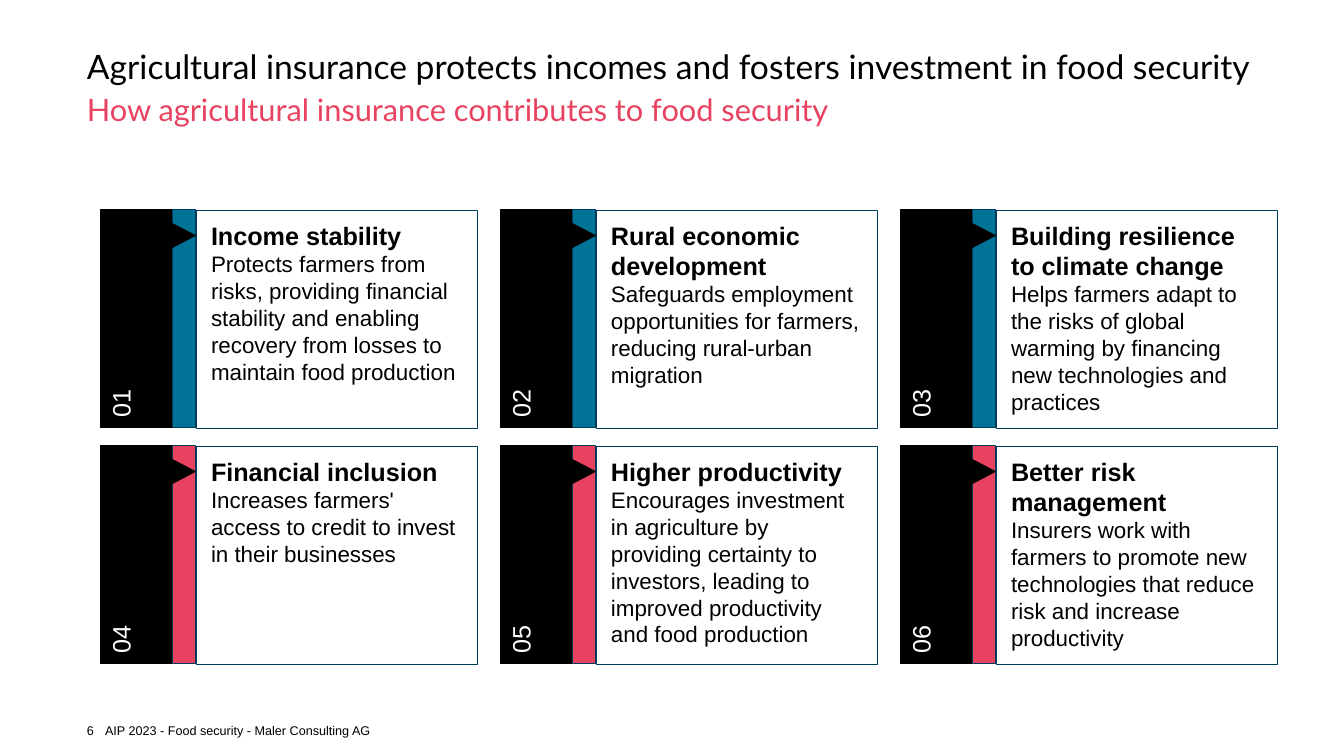
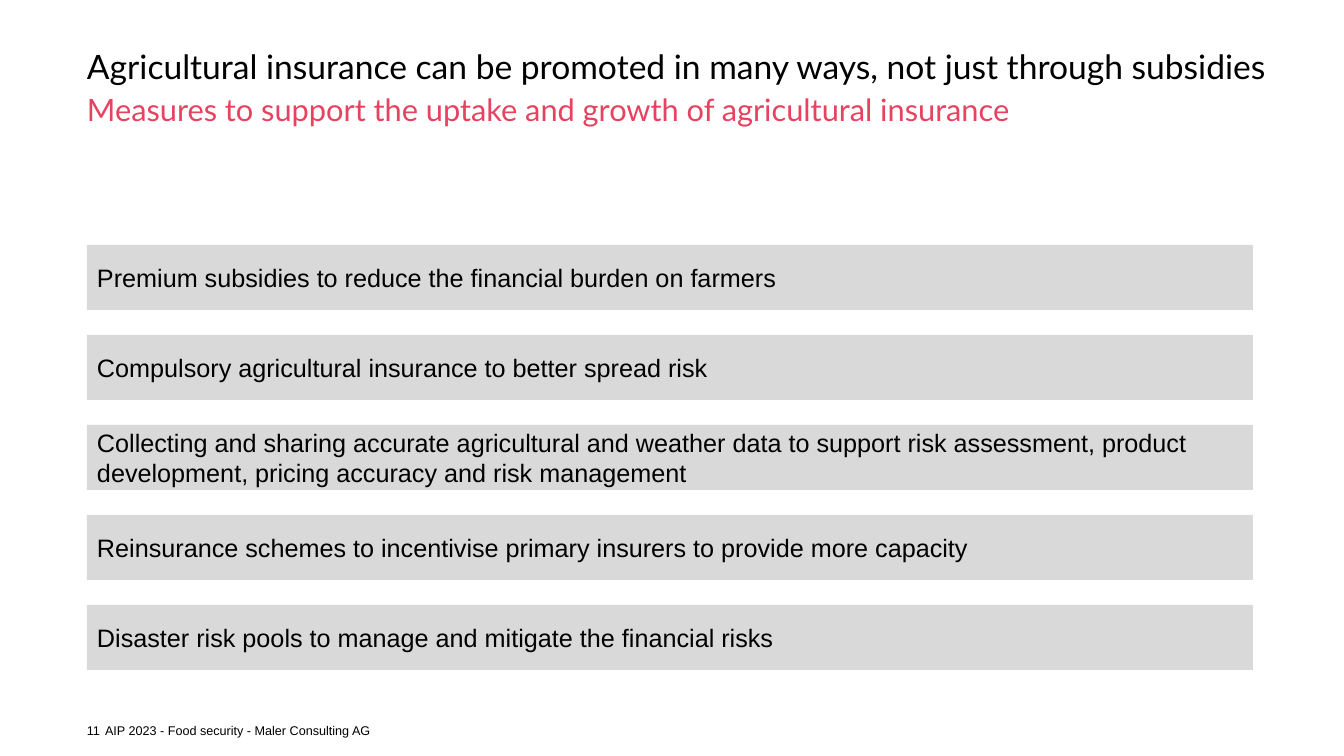
"""Build two slides on agricultural insurance and food security."""
from lxml.etree import SubElement
from pptx import Presentation
from pptx.dml.color import RGBColor
from pptx.enum.shapes import MSO_SHAPE
from pptx.enum.text import MSO_ANCHOR, MSO_AUTO_SIZE, PP_ALIGN
from pptx.oxml.ns import qn
from pptx.util import Emu, Pt

PX = 914400 / 100.8
HUES = {
    "black": "000000",
    "white": "FFFFFF",
    "navy": "003B5C",
    "blue": "007396",
    "red": "E74360",
    "grey": "D9D9D9",
}
RECT = MSO_SHAPE.RECTANGLE
LEFT = 87
NOTE = "AIP 2023 - Food security - Maler Consulting AG"

HEADS = [
    ("Agricultural insurance protects incomes and fosters investment in food security",
     "How agricultural insurance contributes to food security", 1180, "6"),
    ("Agricultural insurance can be promoted in many ways, not just through subsidies",
     "Measures to support the uptake and growth of agricultural insurance", 1218, "11"),
]
CARDS = [
    ("Income stability",
     "Protects farmers from risks, providing financial stability and enabling "
     "recovery from losses to maintain food production"),
    ("Rural economic development",
     "Safeguards employment opportunities for farmers, reducing rural-urban migration"),
    ("Building resilience to climate change",
     "Helps farmers adapt to the risks of global warming by financing new "
     "technologies and practices"),
    ("Financial inclusion",
     "Increases farmers' access to credit to invest in their businesses"),
    ("Higher productivity",
     "Encourages investment in agriculture by providing certainty to investors, "
     "leading to improved productivity and food production"),
    ("Better risk management",
     "Insurers work with farmers to promote new technologies that reduce risk "
     "and increase productivity"),
]
STEPS = [
    "Premium subsidies to reduce the financial burden on farmers",
    "Compulsory agricultural insurance to better spread risk",
    "Collecting and sharing accurate agricultural and weather data to support "
    "risk assessment, product development, pricing accuracy and risk management",
    "Reinsurance schemes to incentivise primary insurers to provide more capacity",
    "Disaster risk pools to manage and mitigate the financial risks",
]


def box(slide, kind, x, y, w, h, fill, line=None, width=0.25, turn=0):
    """Draw a shape that covers the given area once it is turned."""
    if turn:
        x, y, w, h = x + (w - h) // 2, y + (h - w) // 2, h, w
    shape = slide.shapes.add_shape(kind, *[Emu(round(n * PX)) for n in (x, y, w, h)])
    shape.rotation = turn
    shape.shadow.inherit = False
    shape.fill.solid()
    shape.fill.fore_color.rgb = RGBColor.from_string(HUES[fill])
    if line:
        shape.line.color.rgb = RGBColor.from_string(HUES[line])
        shape.line.width = Pt(width)
    else:
        shape.line.fill.background()
    return shape


def write(shape, rows, pad=(10, 5), anchor=MSO_ANCHOR.TOP, face="Arial", wrap=True):
    """Fill a shape with rows of text, size, colour and weight."""
    frame = shape.text_frame
    frame.text = "\n".join(row[0] for row in rows)
    frame.word_wrap = wrap
    frame.auto_size = MSO_AUTO_SIZE.NONE
    frame.vertical_anchor = anchor
    frame.margin_left = frame.margin_right = Emu(round(pad[0] * PX))
    frame.margin_top = frame.margin_bottom = Emu(round(pad[1] * PX))
    for par, (text, size, hue, bold) in zip(frame.paragraphs, rows):
        par.alignment = PP_ALIGN.LEFT
        for run in par.runs:
            run.font.name = face
            run.font.size = Pt(size)
            run.font.bold = bold
            run.font.color.rgb = RGBColor.from_string(HUES[hue])


deck = Presentation()
deck.slide_width = Emu(round(1344 * PX))
deck.slide_height = Emu(round(756 * PX))

for head, lead, wide, page in HEADS:
    slide = deck.slides.add_slide(deck.slide_layouts[1])
    title, body = slide.shapes.title, slide.placeholders[1]
    parts = [
        (title, head, 24, "black", 44, wide, MSO_ANCHOR.BOTTOM),
        (body, lead, 22, "red", 95, 1180, MSO_ANCHOR.TOP),
    ]
    for shape, text, size, hue, top, width, anchor in parts:
        shape.left, shape.top = Emu(round(LEFT * PX)), Emu(round(top * PX))
        shape.width, shape.height = Emu(round(width * PX)), Emu(round(43 * PX))
        write(shape, [(text, size, hue, False)], (0, 0), anchor, "Lato")
        par = shape.text_frame.paragraphs[0]
        par.line_spacing = 0.9
        par.space_before = Pt(0)
    props = body.text_frame.paragraphs[0]._p.get_or_add_pPr()
    props.set("marL", "0")
    props.set("indent", "0")
    SubElement(props, qn("a:buNone"))

    for text, x, w in [(NOTE, 105, 203), (page, LEFT, 17)]:
        area = [Emu(round(n * PX)) for n in (x, 723, w, 15)]
        label = slide.shapes.add_textbox(*area)
        write(label, [(text, 9, "black", False)], (0, 0), MSO_ANCHOR.MIDDLE, wrap=False)

first, last = deck.slides

for i, (name, text) in enumerate(CARDS):
    row, col = divmod(i, 3)
    x, y = 101 + 400 * col, 210 + 236 * row
    hue = ("blue", "red")[row]
    card = box(first, RECT, x + 95, y, 281, 218, "white", "navy")
    write(card, [(name, 18, "black", True), (text, 16, "black", False)], (15, 10))
    band = box(first, RECT, x, y, 79, 218, "black", "black", turn=270)
    write(band, [(f"{i + 1:02}", 18, "white", False)])
    box(first, RECT, x + 72, y, 23, 218, hue, "navy", turn=270)
    box(first, MSO_SHAPE.ISOSCELES_TRIANGLE, x + 72, y + 14, 23, 24,
        "black", "black", 0.5, 90)

for i, text in enumerate(STEPS):
    bar = box(last, RECT, LEFT, 245 + 90 * i, 1166, 65, "grey")
    write(bar, [(text, 18, "black", False)], anchor=MSO_ANCHOR.MIDDLE)

deck.save("out.pptx")
